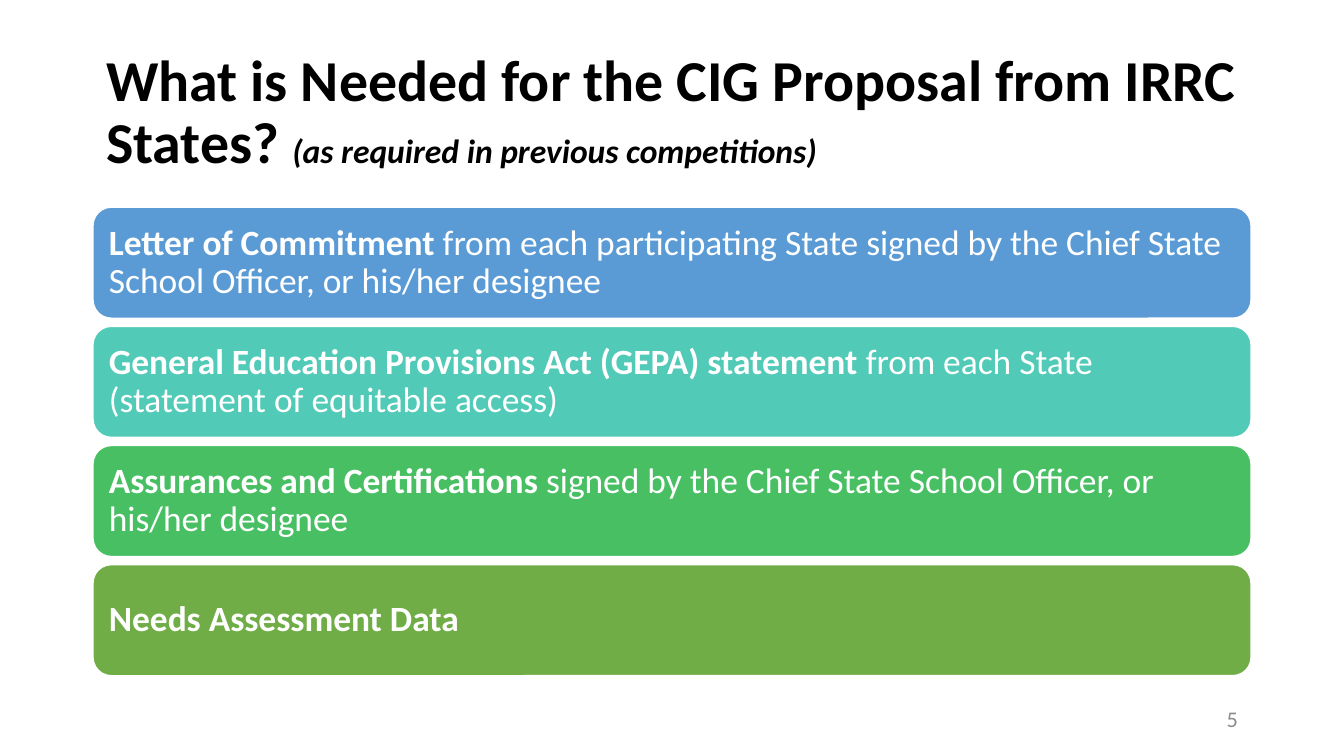
from pptx import Presentation
from pptx.dml.color import RGBColor
from pptx.enum.shapes import MSO_SHAPE
from pptx.enum.text import MSO_ANCHOR, MSO_AUTO_SIZE, PP_ALIGN
from pptx.util import Inches, Pt

# Widescreen slide, with a column and row grid in inches
SLIDE_WIDTH = 10
SLIDE_HEIGHT = SLIDE_WIDTH * 9 / 16
LEFT, WIDTH = 0.69, 8.62
FIRST_ROW, LAST_ROW, ROW_HEIGHT = 1.54, 4.2, 0.83
WHITE = "FFFFFF"

REQUIREMENTS = [
    ("5B9BD5", "Letter of Commitment ",
     "from each participating State signed by the Chief State School Officer, or his/her designee"),
    ("52CAB8", "General Education Provisions Act (GEPA) statement ",
     "from each State (statement of equitable access)"),
    ("49BF64", "Assurances and Certifications ",
     "signed by the Chief State School Officer, or his/her designee"),
    ("70AD47", "Needs Assessment Data", ""),
]
ROW_STEP = (LAST_ROW - FIRST_ROW) / (len(REQUIREMENTS) - 1)


def color(hex_value):
    return RGBColor.from_string(hex_value)


def set_attributes(target, values):
    for name, value in values.items():
        setattr(target, name, value)


def place(shape, left, top, width, height):
    set_attributes(shape, {"left": Inches(left), "top": Inches(top),
                           "width": Inches(width), "height": Inches(height)})


def write_text(shape, runs, hex_value, align=PP_ALIGN.LEFT, **frame_values):
    """Fill a shape with one paragraph; runs are (text, font values) pairs."""
    frame = shape.text_frame
    set_attributes(frame, {"word_wrap": True, "auto_size": MSO_AUTO_SIZE.NONE,
                           "vertical_anchor": MSO_ANCHOR.MIDDLE, **frame_values})
    paragraph = frame.paragraphs[0]
    set_attributes(paragraph, {"alignment": align, "line_spacing": 0.9})
    for text, font_values in runs:
        run = paragraph.add_run()
        run.text = text
        set_attributes(run.font, {"name": "Calibri", **font_values})
        run.font.color.rgb = color(hex_value)


def add_title(slide):
    title = slide.shapes.title
    place(title, LEFT, 0.3, WIDTH, 1.09)
    write_text(title, [
        ("What is Needed for the CIG Proposal from IRRC States? ",
         {"size": Pt(31), "bold": True}),
        ("(as required in previous competitions)",
         {"size": Pt(18), "bold": True, "italic": True}),
    ], "000000")


def add_requirement(slide, row, fill, heading, detail):
    top = FIRST_ROW + row * ROW_STEP
    bar = slide.shapes.add_shape(
        MSO_SHAPE.ROUNDED_RECTANGLE,
        Inches(LEFT), Inches(top), Inches(WIDTH), Inches(ROW_HEIGHT))
    bar.shadow.inherit = False
    bar.fill.solid()
    bar.fill.fore_color.rgb = color(fill)
    bar.line.color.rgb = color(WHITE)
    bar.line.width = Pt(1)
    runs = [(heading, {"size": Pt(19), "bold": True})]
    if detail:
        runs.append((detail, {"size": Pt(19), "bold": False}))
    margins = {f"margin_{side}": Inches(0.08)
               for side in ("left", "top", "right", "bottom")}
    write_text(bar, runs, WHITE, **margins)


def add_page_number(slide, number):
    width = 2.25
    box = slide.shapes.add_textbox(
        Inches(LEFT + WIDTH - width), Inches(5.21), Inches(width), Inches(0.3))
    write_text(box, [(str(number), {"size": Pt(12)})], "8C8C8C", PP_ALIGN.RIGHT)


def main():
    presentation = Presentation()
    set_attributes(presentation, {"slide_width": Inches(SLIDE_WIDTH),
                                  "slide_height": Inches(SLIDE_HEIGHT)})
    # Title Only layout
    slide = presentation.slides.add_slide(presentation.slide_layouts[5])

    add_title(slide)
    add_page_number(slide, 5)
    # Stack of required documents
    for row, requirement in enumerate(REQUIREMENTS):
        add_requirement(slide, row, *requirement)

    presentation.save("out.pptx")


if __name__ == "__main__":
    main()
